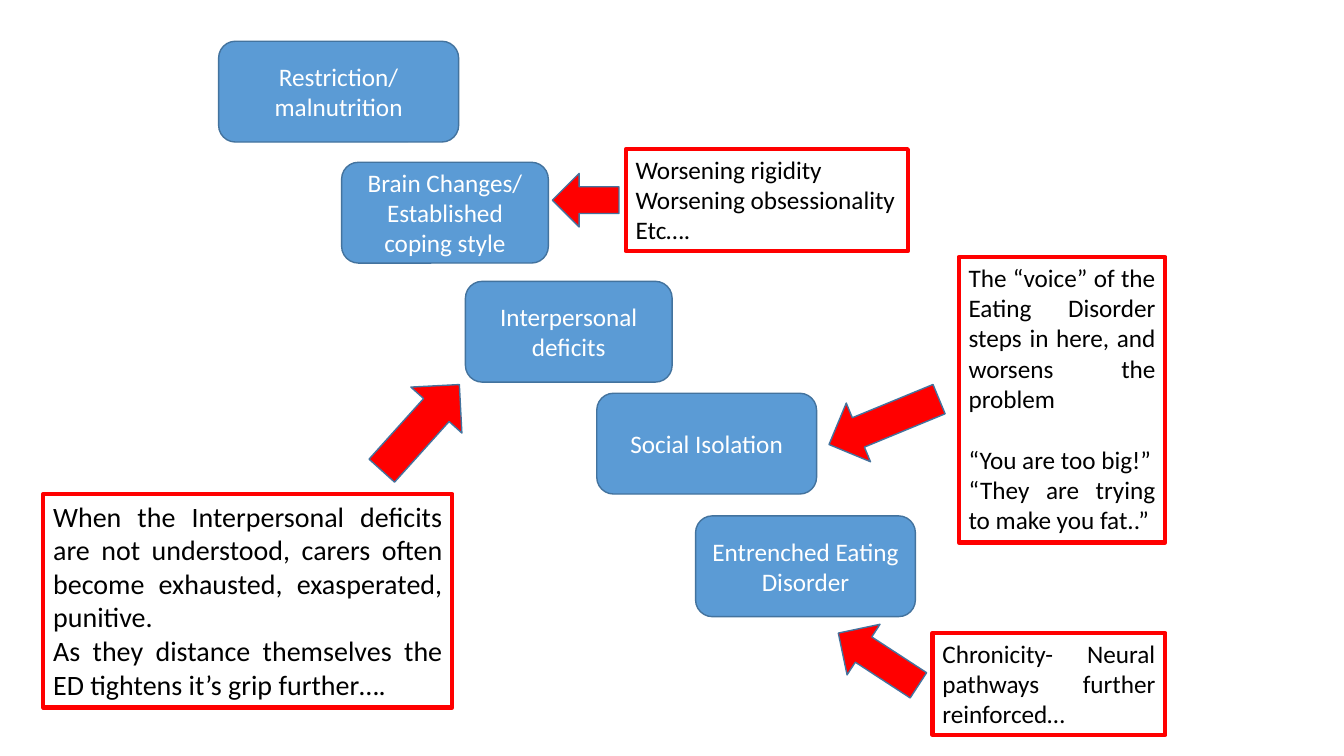
import pptx
import pptx.util
import pptx.dml.color
import pptx.enum.shapes
import pptx.enum.text

Cm = pptx.util.Cm
Pt = pptx.util.Pt
RGBColor = pptx.dml.color.RGBColor
KIND = pptx.enum.shapes.MSO_SHAPE
ALIGN = pptx.enum.text.PP_ALIGN
ANCHOR = pptx.enum.text.MSO_ANCHOR
FIT = pptx.enum.text.MSO_AUTO_SIZE

BLUE = RGBColor(0x5B, 0x9B, 0xD5)
NAVY = RGBColor(0x43, 0x73, 0x9E)
RED = RGBColor(0xFF, 0x00, 0x00)
WHITE = RGBColor(0xFF, 0xFF, 0xFF)
BLACK = RGBColor(0x00, 0x00, 0x00)

STEPS = [
    ("Restriction/\nmalnutrition", 5.51, 1.04, 6.05),
    ("Brain Changes/\nEstablished coping style", 8.61, 4.09, 5.21),
    ("Interpersonal deficits", 11.73, 7.09, 5.21),
    ("Social Isolation", 15.04, 9.91, 5.54),
    ("Entrenched Eating Disorder", 17.53, 13, 5.54),
]

ARROWS = [
    (KIND.RIGHT_ARROW, 9.14, 9.91, 2.92, 1.73, 312),
    (KIND.LEFT_ARROW, 20.78, 9.83, 3, 1.6, 337.6),
    (KIND.RIGHT_ARROW, 20.93, 15.85, 2.41, 1.52, 213.1),
    (KIND.LEFT_ARROW, 13.92, 4.37, 1.68, 1.35, 0),
]


def write(frame, text, size=18, color=BLACK, align=ALIGN.JUSTIFY, gaps=None):
    for i, line in enumerate(text.split("\n")):
        para = frame.paragraphs[0] if i == 0 else frame.add_paragraph()
        para.alignment = align
        if gaps and i in gaps:
            para.space_before = Pt(gaps[i])
        run = para.add_run()
        run.text = line
        run.font.name = "Calibri"
        run.font.size = Pt(size)
        run.font.color.rgb = color


def draw(slide, kind, left, top, width, height, fill):
    shape = slide.shapes.add_shape(kind, Cm(left), Cm(top), Cm(width), Cm(height))
    shape.shadow.inherit = False
    shape.fill.solid()
    shape.fill.fore_color.rgb = fill
    shape.line.color.rgb = NAVY
    shape.line.width = Pt(1)
    return shape


def add_step(slide, text, left, top, width):
    box = draw(slide, KIND.ROUNDED_RECTANGLE, left, top, width, 2.54, BLUE)
    box.text_frame.word_wrap = True
    box.text_frame.vertical_anchor = ANCHOR.MIDDLE
    write(box.text_frame, text, color=WHITE, align=ALIGN.CENTER)


def add_note(slide, text, left, top, width, height, wrap=True, **style):
    box = slide.shapes.add_textbox(Cm(left), Cm(top), Cm(width), Cm(height))
    box.line.color.rgb = RED
    box.line.width = Pt(3)
    box.text_frame.word_wrap = wrap
    box.text_frame.auto_size = FIT.SHAPE_TO_FIT_TEXT
    write(box.text_frame, text, **style)


def add_arrow(slide, kind, left, top, width, height, turn):
    arrow = draw(slide, kind, left, top, width, height, RED)
    arrow.rotation = turn


def main():
    deck = pptx.Presentation()
    deck.slide_width = Cm(33.87)
    deck.slide_height = Cm(19.05)
    slide = deck.slides.add_slide(deck.slide_layouts[6])

    for step in STEPS:
        add_step(slide, *step)

    add_note(
        slide,
        "When the Interpersonal deficits are not understood, carers often "
        "become exhausted, exasperated, punitive.\n"
        "As they distance themselves the ED tightens it’s grip further….",
        1.09, 12.45, 10.31, 5.38, size=20,
    )
    add_note(
        slide,
        "The “voice” of the Eating Disorder steps in here, and worsens the problem\n"
        "“You are too big!”\n"
        "“They are trying to make you fat..”",
        24.16, 6.48, 5.21, 7.19, gaps={1: 22},
    )
    add_note(
        slide,
        "Chronicity- Neural pathways further reinforced…",
        23.5, 15.95, 5.87, 2.57,
    )
    add_note(
        slide,
        "Worsening rigidity\nWorsening obsessionality\nEtc….",
        15.77, 3.76, 7.11, 2.57, wrap=False,
    )

    for arrow in ARROWS:
        add_arrow(slide, *arrow)

    deck.save("out.pptx")


if __name__ == "__main__":
    main()
